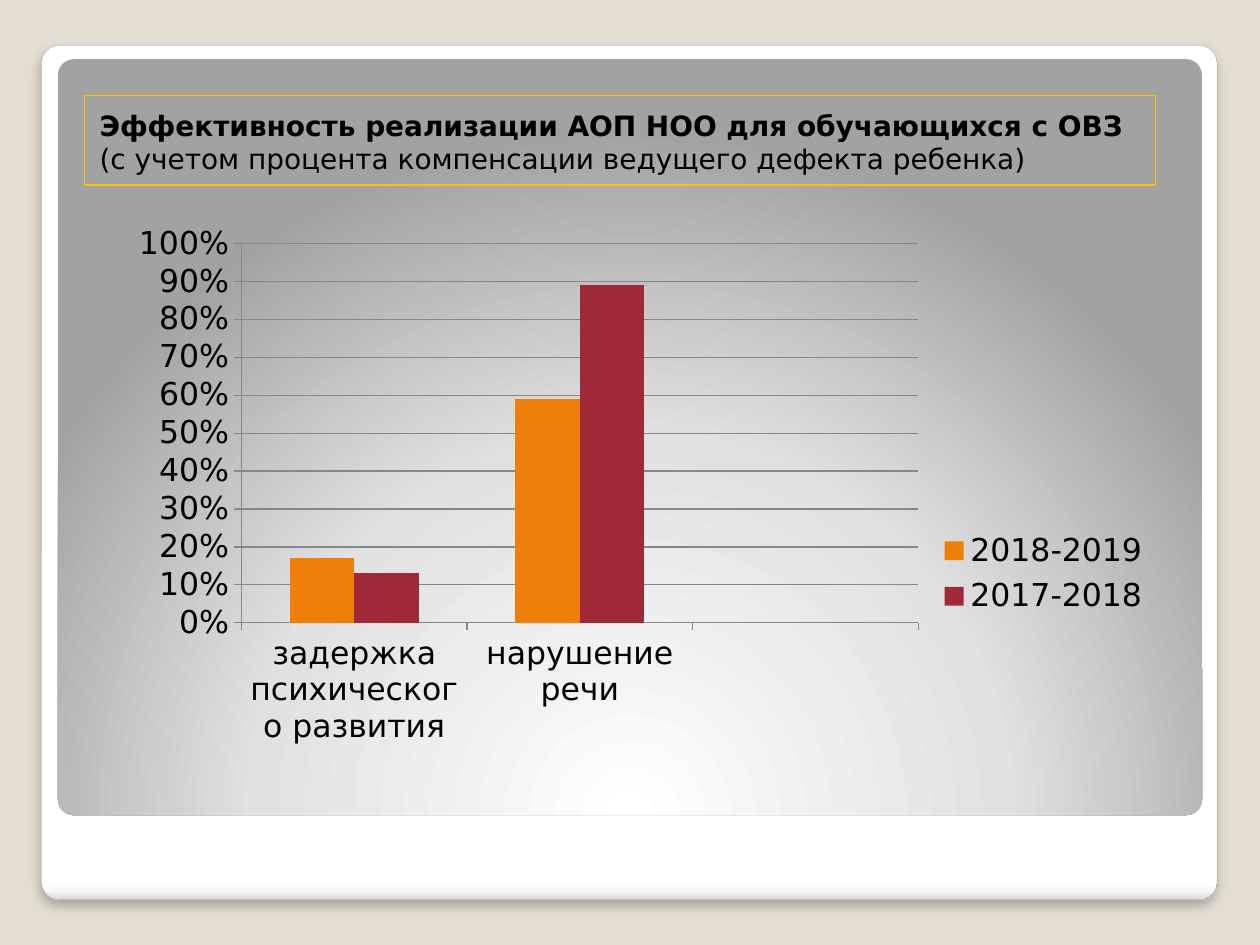
import pptx
import pptx.chart.data
import pptx.dml.color
import pptx.enum.chart
import pptx.enum.shapes
import pptx.enum.text
import pptx.oxml
import pptx.oxml.ns
import pptx.util
from dataclasses import dataclass

Inches = pptx.util.Inches
Pt = pptx.util.Pt


@dataclass(frozen=True)
class Theme:
    font: str = "DejaVu Sans"
    backdrop: str = "E3DED1"
    text: str = "000000"
    card_line: str = "A4A4A4"
    title_line: str = "FFC000"
    grid: str = "878787"
    series: tuple = ("F07F09", "9F2936")
    card_stops: tuple = ((0, "FFFFFF"), (98, "FFFFFF"), (99, "F7F7F7"), (100, "DADADA"))
    panel_stops: tuple = ((0, "FFFFFF"), (55, "E1E1E1"), (100, "A2A2A2"))
    title_size: int = 16
    chart_size: int = 18


THEME = Theme()
LINEAR = '<a:lin ang="5400000" scaled="0"/>'
RADIAL = ('<a:path path="circle"><a:fillToRect l="50000" t="175000" '
          'r="50000" b="-75000"/></a:path>')


def color(value):
    return pptx.dml.color.RGBColor.from_string(value)


def apply(target, values):
    for name, value in values.items():
        setattr(target, name, value)


def drawing(tag, content, attributes=""):
    namespaces = pptx.oxml.ns.nsdecls("a")
    return pptx.oxml.parse_xml(f"<a:{tag} {namespaces} {attributes}>{content}</a:{tag}>")


def style_font(font, size, bold=False):
    apply(font, {"name": THEME.font, "size": Pt(size), "bold": bold})
    font.color.rgb = color(THEME.text)


def style_line(line, value, width):
    line.color.rgb = color(value)
    line.width = Pt(width)


def add_card(page, bounds, stops, direction):
    card = page.shapes.add_shape(
        pptx.enum.shapes.MSO_SHAPE.ROUNDED_RECTANGLE, *map(Inches, bounds))
    card.adjustments[0] = 0.021
    card.shadow.inherit = False
    card.line.fill.background()
    card.fill.background()
    stop_list = "".join(
        f'<a:gs pos="{place * 1000}"><a:srgbClr val="{value}"/></a:gs>'
        for place, value in stops)
    properties = card._element.spPr
    blank = properties.find(pptx.oxml.ns.qn("a:noFill"))
    properties.replace(blank, drawing("gradFill", f"<a:gsLst>{stop_list}</a:gsLst>{direction}"))
    return card


def add_shadow(shape):
    effects = shape._element.spPr.find(pptx.oxml.ns.qn("a:effectLst"))
    effects.append(drawing(
        "outerShdw", '<a:srgbClr val="000000"><a:alpha val="25000"/></a:srgbClr>',
        f'blurRad="{Pt(6)}" dist="{Pt(4)}" dir="5400000" rotWithShape="0"'))


def place_title(page, bounds, spans):
    title = page.shapes.title
    apply(title, dict(zip(("left", "top", "width", "height"), map(Inches, bounds))))
    style_line(title.line, THEME.title_line, 0.75)
    frame = title.text_frame
    apply(frame, {
        "margin_left": Inches(0.12), "margin_right": Inches(0.1),
        "margin_top": Inches(0.1), "margin_bottom": Inches(0.05),
        "word_wrap": True,
        "auto_size": pptx.enum.text.MSO_AUTO_SIZE.NONE,
        "vertical_anchor": pptx.enum.text.MSO_ANCHOR.TOP})
    para = frame.paragraphs[0]
    para.alignment = pptx.enum.text.PP_ALIGN.LEFT
    for text, bold in spans:
        span = para.add_run()
        span.text = text
        style_font(span.font, THEME.title_size, bold)
    page.shapes._spTree.append(title._element)


def set_layout(parent, index, bounds, inner=False):
    for old in parent.findall(pptx.oxml.ns.qn("c:layout")):
        parent.remove(old)
    target = '<c:layoutTarget val="inner"/>' if inner else ""
    modes = "".join(f'<c:{axis}Mode val="edge"/>' for axis in "xy")
    sizes = "".join(f'<c:{side} val="{value}"/>' for side, value in zip("xywh", bounds))
    parent.insert(index, pptx.oxml.parse_xml(
        f'<c:layout {pptx.oxml.ns.nsdecls("c")}><c:manualLayout>'
        f"{target}{modes}{sizes}</c:manualLayout></c:layout>"))


def add_column_chart(page, bounds, categories, series):
    data = pptx.chart.data.CategoryChartData(number_format="0%")
    data.categories = categories
    for name, values in series:
        data.add_series(name, values)
    chart = page.shapes.add_chart(
        pptx.enum.chart.XL_CHART_TYPE.COLUMN_CLUSTERED, *map(Inches, bounds), data).chart
    chart.has_title = False
    style_font(chart.font, THEME.chart_size)
    plot = chart.plots[0]
    apply(plot, {"gap_width": 150, "overlap": 0, "vary_by_categories": False})
    for columns, value in zip(plot.series, THEME.series):
        columns.format.fill.solid()
        columns.format.fill.fore_color.rgb = color(value)
    for axis in (chart.category_axis, chart.value_axis):
        axis.major_tick_mark = pptx.enum.chart.XL_TICK_MARK.OUTSIDE
        style_line(axis.format.line, THEME.grid, 0.75)
    apply(chart.value_axis, {"minimum_scale": 0, "maximum_scale": 1, "major_unit": 0.1})
    apply(chart.value_axis.tick_labels, {"number_format": "0%", "number_format_is_linked": False})
    style_line(chart.value_axis.major_gridlines.format.line, THEME.grid, 0.75)
    chart.has_legend = True
    apply(chart.legend, {
        "position": pptx.enum.chart.XL_LEGEND_POSITION.RIGHT, "include_in_layout": False})
    style_font(chart.legend.font, THEME.chart_size)
    set_layout(chart._chartSpace.chart.plotArea, 0, (0.129, 0.035, 0.638, 0.684), inner=True)
    set_layout(chart.legend._element, 1, (0.78, 0.54, 0.21, 0.18))


def main():
    deck = pptx.Presentation()
    apply(deck, {"slide_width": Inches(10), "slide_height": Inches(7.5)})
    page = deck.slides.add_slide(deck.slide_layouts.get_by_name("Title Only"))
    page.background.fill.solid()
    page.background.fill.fore_color.rgb = color(THEME.backdrop)

    card = add_card(page, (0.33, 0.36, 9.33, 6.78), THEME.card_stops, LINEAR)
    style_line(card.line, THEME.card_line, 0.16)
    add_shadow(card)
    add_card(page, (0.46, 0.47, 9.08, 6), THEME.panel_stops, RADIAL)
    add_column_chart(
        page, (0.83, 1.78, 8.42, 4.4),
        ("задержка психического развития", "нарушение речи", ""),
        (("2018-2019", (0.17, 0.59, None)), ("2017-2018", (0.13, 0.89, None))))
    place_title(page, (0.67, 0.76, 8.5, 0.71), (
        ("Эффективность реализации АОП НОО для обучающихся с ОВЗ ", True),
        ("(с учетом процента компенсации ведущего дефекта ребенка)", False)))
    deck.save("out.pptx")


if __name__ == "__main__":
    main()
